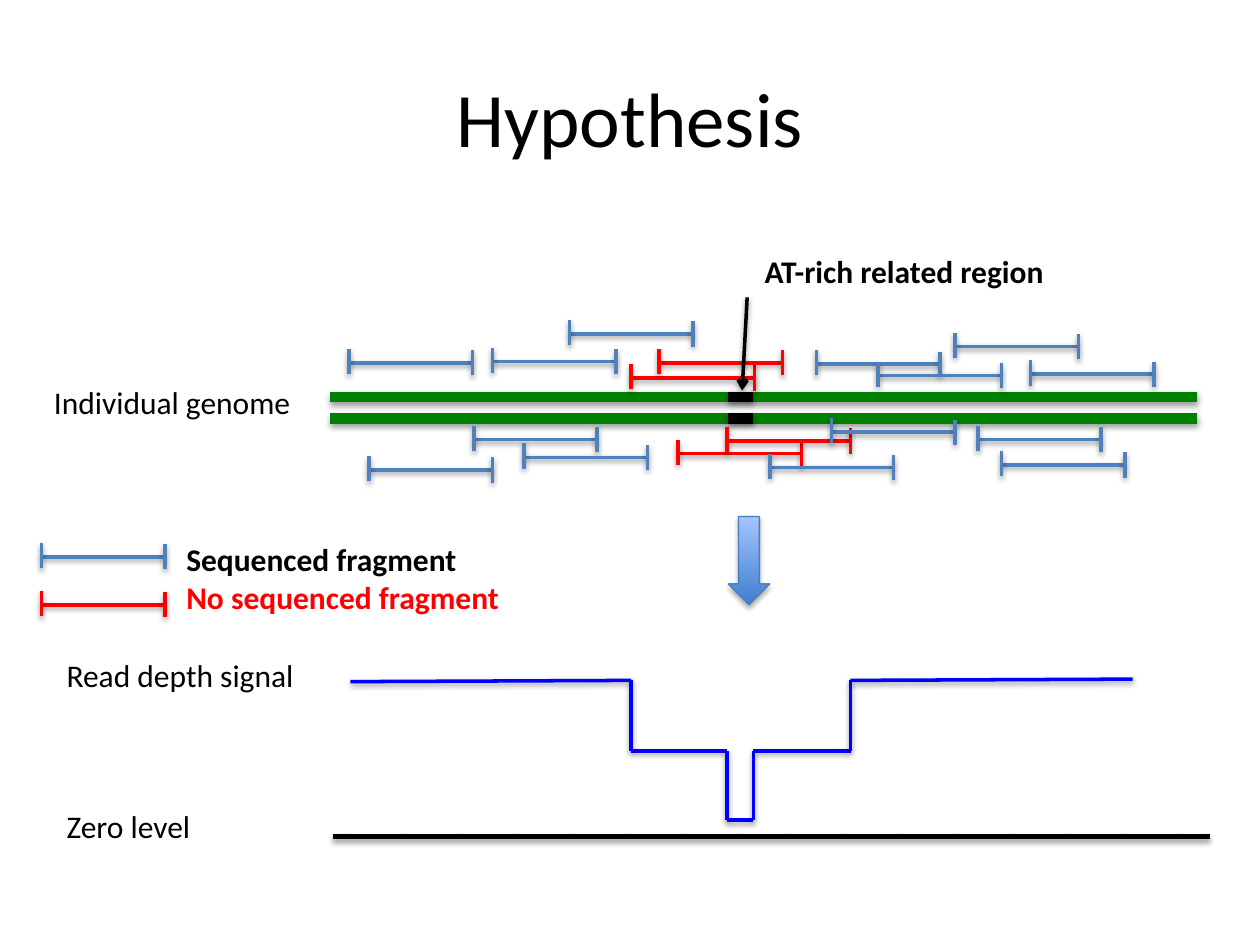
from pptx import Presentation
from pptx.dml.color import RGBColor
from pptx.enum.shapes import MSO_CONNECTOR, MSO_SHAPE
from pptx.enum.text import MSO_ANCHOR, MSO_AUTO_SIZE, PP_ALIGN
from pptx.oxml import parse_xml
from pptx.oxml.ns import nsdecls
from pptx.util import Inches, Pt

BLACK, RED, GREEN = "000000", "FF0000", "008000"
SEQUENCED, SIGNAL = "4F81BD", "0000FF"
FRAGMENT_WIDTH = 0.98


def colour(value):
    return RGBColor.from_string(value)


class Slide:
    font = "Calibri"

    def __init__(self, deck):
        self.page = deck.slides.add_slide(deck.slide_layouts[6])

    def text(self, left, top, width, height, lines, size=18, bold=False, title=False):
        box = self.page.shapes.add_textbox(
            Inches(left), Inches(top), Inches(width), Inches(height))
        frame = box.text_frame
        frame.word_wrap = title
        frame.auto_size = MSO_AUTO_SIZE.NONE if title else MSO_AUTO_SIZE.SHAPE_TO_FIT_TEXT
        frame.vertical_anchor = MSO_ANCHOR.MIDDLE if title else MSO_ANCHOR.TOP
        for index, (words, shade) in enumerate(lines):
            para = frame.add_paragraph() if index else frame.paragraphs[0]
            para.alignment = PP_ALIGN.CENTER if title else PP_ALIGN.LEFT
            span = para.add_run()
            span.text = words
            span.font.name = self.font
            span.font.size = Pt(size)
            span.font.bold = bold
            span.font.color.rgb = colour(shade)

    def line(self, start, end, shade, weight=2, arrow=False, shapes=None):
        shapes = self.page.shapes if shapes is None else shapes
        connector = shapes.add_connector(
            MSO_CONNECTOR.STRAIGHT, *(Inches(value) for value in (*start, *end)))
        connector.line.color.rgb = colour(shade)
        connector.line.width = Pt(weight)
        if arrow:
            connector.line._get_or_add_ln().append(
                parse_xml(f'<a:tailEnd {nsdecls("a")} type="arrow"/>'))

    def fragment(self, left, middle, shade):
        shapes = self.page.shapes.add_group_shape().shapes
        right = left + FRAGMENT_WIDTH
        self.line((left, middle), (right, middle), shade, shapes=shapes)
        self.line((right, middle + 0.1), (right, middle - 0.1), shade, shapes=shapes)
        self.line((left, middle + 0.09), (left, middle - 0.11), shade, shapes=shapes)

    def down_arrow(self, left, top, width, height):
        arrow = self.page.shapes.add_shape(
            MSO_SHAPE.DOWN_ARROW, Inches(left), Inches(top), Inches(width), Inches(height))
        arrow.fill.gradient()
        arrow.fill.gradient_angle = 90
        for stop, position, shade in zip(
                arrow.fill.gradient_stops, (0, 1), ("3F80CE", "A4C4FF")):
            stop.position = position
            stop.color.rgb = colour(shade)
        arrow.line.color.rgb = colour("4B7EBC")
        arrow.line.width = Pt(0.75)


def main():
    deck = Presentation()
    deck.slide_width, deck.slide_height = Inches(10), Inches(7.5)
    slide = Slide(deck)

    slide.text(0.5, 0.3, 9, 1.25, [("Hypothesis", BLACK)], size=44, title=True)
    slide.text(0.33, 2.99, 2.21, 0.4, [("Individual genome", BLACK)])
    for left, right, shade in ((2.62, 9.5, GREEN), (5.78, 5.98, BLACK)):
        for strand in (3.15, 3.32):
            slide.line((left, strand), (right, strand), shade, weight=6)

    fragments = [
        (5.38, 3.6, RED), (6.11, 3.71, SEQUENCED), (5.01, 3, RED),
        (5.77, 3.5, RED), (5.23, 2.88, RED), (2.93, 3.73, SEQUENCED),
        (6.48, 2.89, SEQUENCED), (3.91, 2.87, SEQUENCED), (3.76, 3.49, SEQUENCED),
        (6.97, 2.98, SEQUENCED), (6.6, 3.43, SEQUENCED), (4.52, 2.65, SEQUENCED),
        (4.16, 3.63, SEQUENCED), (7.76, 3.49, SEQUENCED), (8.18, 2.97, SEQUENCED),
        (2.77, 2.88, SEQUENCED), (7.95, 3.69, SEQUENCED), (7.58, 2.75, SEQUENCED),
    ]
    legend = [(0.33, 4.42, SEQUENCED), (0.33, 4.8, RED)]
    for left, middle, shade in fragments:
        slide.fragment(left, middle, shade)

    slide.text(5.97, 1.95, 2.44, 0.4, [("AT-rich related region", BLACK)], bold=True)
    slide.line((5.93, 2.36), (5.89, 3.1), BLACK, arrow=True)

    for left, middle, shade in legend:
        slide.fragment(left, middle, shade)
    slide.text(1.38, 4.24, 2.71, 0.71,
               [("Sequenced fragment", BLACK), ("No sequenced fragment", RED)], bold=True)

    slide.line((2.64, 6.64), (9.6, 6.64), BLACK, weight=3)
    slide.text(0.43, 6.36, 1.19, 0.4, [("Zero level", BLACK)])
    slide.text(0.43, 5.16, 2.11, 0.4, [("Read depth signal", BLACK)])
    signal = [(2.78, 5.41), (5.01, 5.4), (5.01, 5.96), (5.77, 5.96), (5.77, 6.51),
              (5.98, 6.51), (5.98, 5.96), (6.75, 5.96), (6.75, 5.4), (8.99, 5.39)]
    for start, end in zip(signal, signal[1:]):
        slide.line(start, end, SIGNAL)
    slide.down_arrow(5.78, 4.1, 0.33, 0.7)

    deck.save("out.pptx")


if __name__ == "__main__":
    main()
